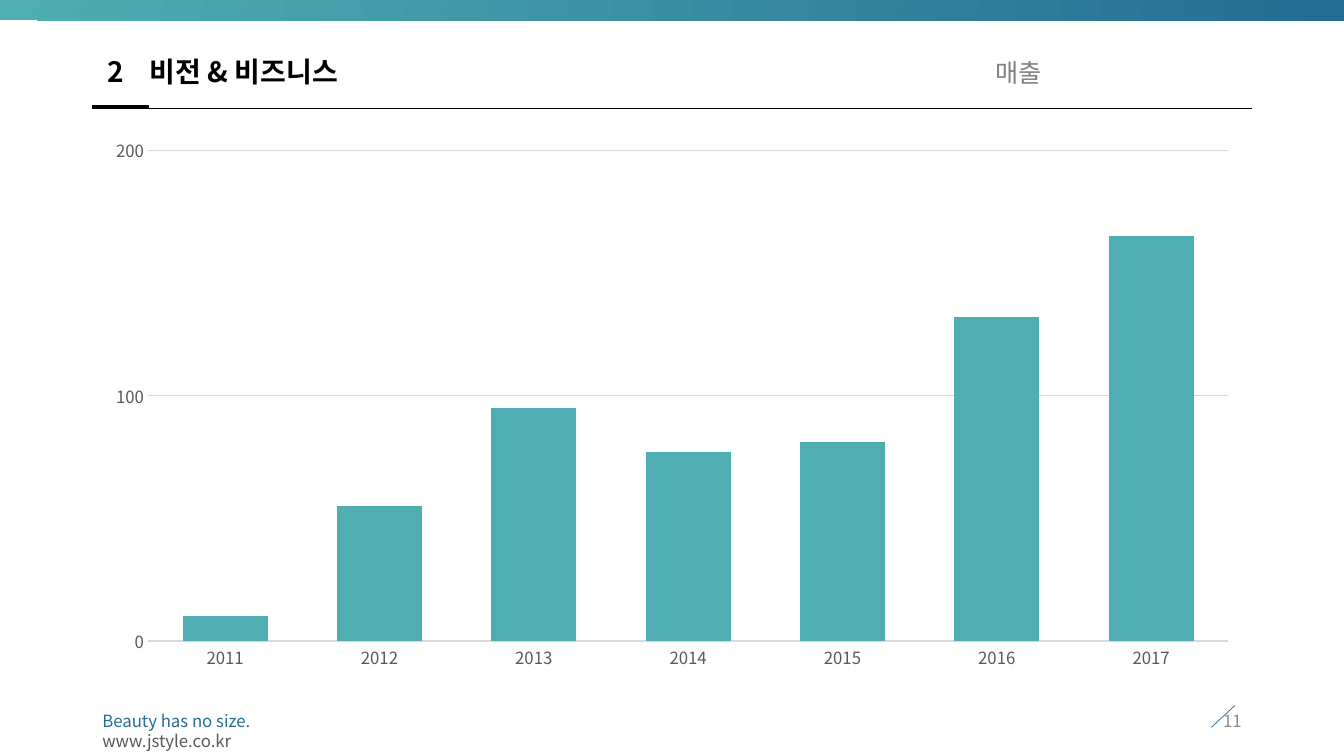
from dataclasses import dataclass

from lxml.etree import SubElement
from pptx import Presentation
from pptx.chart.data import CategoryChartData
from pptx.dml.color import RGBColor
from pptx.enum.chart import XL_CHART_TYPE as ChartType, XL_TICK_MARK as TickMark
from pptx.enum.shapes import MSO_CONNECTOR as Connector, MSO_SHAPE as Preset
from pptx.enum.text import MSO_ANCHOR as Anchor, MSO_AUTO_SIZE as AutoSize, PP_ALIGN as Align
from pptx.oxml.ns import qn
from pptx.util import Emu, Inches, Pt


@dataclass(frozen=True)
class Theme:
    font: str = "Noto Sans CJK KR"
    teal: str = "4FAEB1"
    blue: str = "256D93"
    black: str = "000000"
    dark: str = "595959"
    gray: str = "808080"
    pale: str = "8C8C8C"
    grid: str = "D9D9D9"
    title: int = 20
    topic: int = 18
    small: int = 12


@dataclass(frozen=True)
class Rule:
    start: tuple[float, float]
    end: tuple[float, float]
    color: str
    weight: float


@dataclass(frozen=True)
class Area:
    column: float
    row: float
    columns: float
    rows: float

    def lengths(self) -> tuple[Emu, ...]:
        return tuple(cell(n) for n in (self.column, self.row, self.columns, self.rows))


THEME = Theme()
COLUMNS, ROWS = 160, 90
LEFT, WIDTH = 11, 138
BAND = Area(0, 0, COLUMNS, 2.4)
TITLE = Area(LEFT, 4.8, WIDTH, 8)
CHART = Area(LEFT, 15.1, WIDTH, 65.9)
FOOTER = Area(LEFT, 84, 35, 5.6)
NUMBER = Area(113, 83.4, 36, 4.8)
TITLE_TABS = (0.42, 8.81)
PLOT_SHARES = {"x": 0.048, "y": 0.043, "w": 0.932, "h": 0.886}
RULES = (
    Rule((LEFT, 12.85), (LEFT + WIDTH, 12.85), THEME.black, 0.5),
    Rule((LEFT, 12.7), (17.8, 12.7), THEME.black, 3),
    Rule((147, 84), (144.2, 86.6), THEME.blue, 0.5),
)
SALES = {"2011": 10, "2012": 55, "2013": 95, "2014": 77, "2015": 81, "2016": 132, "2017": 165}


def cell(count: float) -> Emu:
    return Inches(count / 12)


def color_of(value: str) -> RGBColor:
    return RGBColor.from_string(value)


def format_font(font, *, size: float, color: str, bold: bool = False) -> None:
    font.name, font.size, font.bold = THEME.font, Pt(size), bold
    font.color.rgb = color_of(color)


def add_text(para, text: str, *, size: float = THEME.small, color: str = THEME.black,
             bold: bool = False) -> None:
    span = para.add_run()
    span.text = text
    format_font(span.font, size=size, color=color, bold=bold)
    SubElement(span.font._element, qn("a:ea"), typeface=THEME.font)


def add_tabs(para, stops: tuple[float, ...]) -> None:
    tabs = SubElement(para._p.get_or_add_pPr(), qn("a:tabLst"))
    for stop in stops:
        SubElement(tabs, qn("a:tab"), pos=str(Inches(stop)), algn="l")


def place(shape, area: Area) -> None:
    shape.left, shape.top, shape.width, shape.height = area.lengths()


def add_band(page) -> None:
    band = page.shapes.add_shape(Preset.RECTANGLE, *BAND.lengths())
    band.shadow.inherit = False
    band.line.fill.background()
    band.fill.gradient()
    band.fill.gradient_angle = 350
    for stop, color in zip(band.fill.gradient_stops, (THEME.teal, THEME.blue)):
        stop.color.rgb = color_of(color)


def add_rule(page, rule: Rule) -> None:
    ends = (cell(n) for n in (*rule.start, *rule.end))
    line = page.shapes.add_connector(Connector.STRAIGHT, *ends)
    line.line.color.rgb = color_of(rule.color)
    line.line.width = Pt(rule.weight)
    SubElement(line._element.spPr, qn("a:effectLst"))


def fill_title(page) -> None:
    title = page.shapes.title
    place(title, TITLE)
    frame = title.text_frame
    frame.auto_size, frame.word_wrap = AutoSize.NONE, True
    frame.vertical_anchor = Anchor.MIDDLE
    frame.margin_left = Inches(0.15)
    para = frame.paragraphs[0]
    add_tabs(para, TITLE_TABS)
    para.alignment, para.line_spacing = Align.LEFT, 0.9
    add_text(para, "2\t비전 & 비즈니스", size=THEME.title, bold=True)
    add_text(para, "\t매출", size=THEME.topic, color=THEME.gray)


def add_box(page, area: Area, anchor: Anchor):
    frame = page.shapes.add_textbox(*area.lengths()).text_frame
    frame.word_wrap, frame.vertical_anchor = True, anchor
    return frame


def add_footer(page) -> None:
    footer = add_box(page, FOOTER, Anchor.TOP)
    slogan, address = footer.paragraphs[0], footer.add_paragraph()
    for para, text, color in ((slogan, "Beauty has no size.", THEME.blue),
                              (address, "www.jstyle.co.kr", THEME.dark)):
        para.line_spacing = Pt(14.4)
        add_text(para, text, color=color)
    number = add_box(page, NUMBER, Anchor.MIDDLE).paragraphs[0]
    number.alignment = Align.RIGHT
    add_text(number, "11", color=THEME.pale)


def add_sales_chart(page) -> None:
    data = CategoryChartData()
    data.categories = list(SALES)
    data.add_series("Series 1", list(SALES.values()))
    chart = page.shapes.add_chart(ChartType.COLUMN_CLUSTERED, *CHART.lengths(), data).chart
    chart.has_legend = chart.has_title = False
    format_font(chart.font, size=10, color=THEME.black)

    years, amounts = chart.category_axis, chart.value_axis
    for axis in (years, amounts):
        axis.major_tick_mark = axis.minor_tick_mark = TickMark.NONE
        format_font(axis.tick_labels.font, size=THEME.small, color=THEME.dark)
    amounts.minimum_scale, amounts.maximum_scale, amounts.major_unit = 0, 200, 100
    amounts.format.line.fill.background()
    for line, weight in ((years.format.line, 1), (amounts.major_gridlines.format.line, 0.75)):
        line.color.rgb = color_of(THEME.grid)
        line.width = Pt(weight)

    plot = chart.plots[0]
    plot.gap_width, plot.overlap, plot.vary_by_categories = 82, -100, False
    bars = plot.series[0].format.fill
    bars.solid()
    bars.fore_color.rgb = color_of(THEME.teal)

    area = chart._chartSpace.chart.plotArea
    for old in area.findall(qn("c:layout")):
        area.remove(old)
    layout = SubElement(area, qn("c:layout"))
    area.insert(0, layout)
    manual = SubElement(layout, qn("c:manualLayout"))
    settings = {"layoutTarget": "inner", "xMode": "edge", "yMode": "edge", **PLOT_SHARES}
    for name, value in settings.items():
        SubElement(manual, qn(f"c:{name}"), val=str(value))


def main() -> None:
    deck = Presentation()
    deck.slide_width, deck.slide_height = cell(COLUMNS), cell(ROWS)
    page = deck.slides.add_slide(deck.slide_layouts[5])
    for rule in RULES:
        add_rule(page, rule)
    fill_title(page)
    add_footer(page)
    add_sales_chart(page)
    add_band(page)
    deck.save("out.pptx")


if __name__ == "__main__":
    main()
